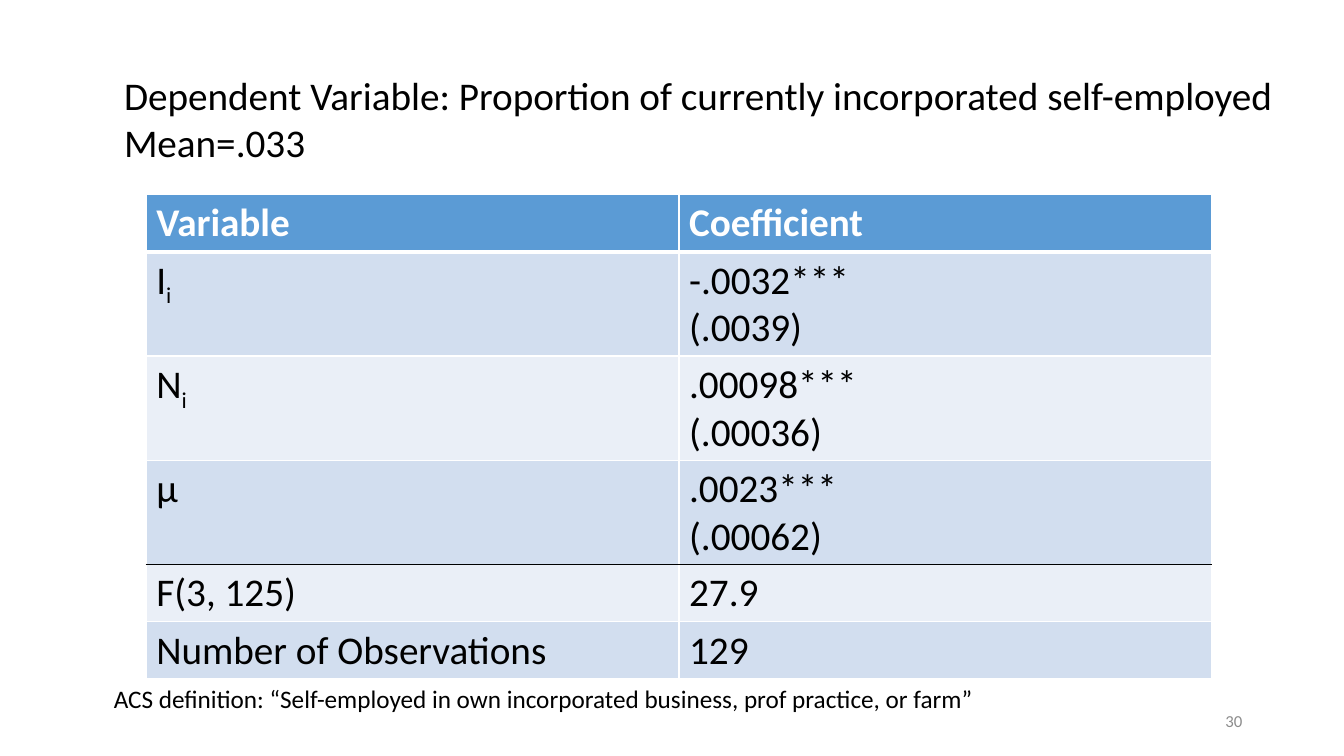
from lxml import etree
from pptx import Presentation
from pptx.dml.color import RGBColor
from pptx.enum.text import MSO_ANCHOR, MSO_AUTO_SIZE, PP_ALIGN
from pptx.oxml.ns import qn
from pptx.util import Inches, Pt

LEFT, RIGHT = PP_ALIGN.LEFT, PP_ALIGN.RIGHT
TOP, MIDDLE = MSO_ANCHOR.TOP, MSO_ANCHOR.MIDDLE
NO_FIT = MSO_AUTO_SIZE.NONE

BLACK = RGBColor(0x00, 0x00, 0x00)
WHITE = RGBColor(0xFF, 0xFF, 0xFF)
GRAY = RGBColor(0x8C, 0x8C, 0x8C)
HEADER_BLUE = RGBColor(0x5B, 0x9B, 0xD5)
BAND_DARK = RGBColor(0xD2, 0xDE, 0xEF)
BAND_LIGHT = RGBColor(0xEA, 0xEF, 0xF7)

FONT = "Calibri"
TITLE_ONLY = 5
LINE_HEIGHT = 0.47
CELL_PADDING = 0.095

HEADING = ["Dependent Variable: Proportion of currently incorporated self-employed",
           "Mean=.033"]
# Each row: variable, its subscript, lines of the coefficient cell
ROWS = [
    ("Variable", "", ["Coefficient"]),
    ("I", "i", ["-.0032***", "(.0039)"]),
    ("N", "i", [".00098***", "(.00036)"]),
    ("μ", "", [".0023***", "(.00062)"]),
    ("F(3, 125)", "", ["27.9"]),
    ("Number of Observations", "", ["129"]),
]
STATISTICS_ROW = 4  # a black rule runs above this row
FOOTNOTE = "ACS definition: “Self-employed in own incorporated business, prof practice, or farm”"


def write(frame, lines, size=28, color=BLACK, bold=False, align=LEFT, subscript=""):
    """Fill a text frame with one paragraph per line."""
    for index, line in enumerate(lines):
        para = frame.paragraphs[0] if index == 0 else frame.add_paragraph()
        para.alignment = align
        for text, baseline in ((line, None), (subscript, "-25000")):
            if not text:
                continue
            span = para.add_run()
            span.text = text
            span.font.name = FONT
            span.font.size = Pt(size)
            span.font.bold = bold
            span.font.color.rgb = color
            if baseline:
                span.font._element.set("baseline", baseline)


def set_border(cell, side, color, width):
    line = etree.SubElement(cell._tc.get_or_add_tcPr(), qn("a:ln" + side),
                            w=str(Pt(width)))
    fill = etree.SubElement(line, qn("a:solidFill"))
    etree.SubElement(fill, qn("a:srgbClr"), val=str(color))


def row_border(edge):
    """Colour and width of the horizontal rule above row number edge."""
    if edge == 1:
        return WHITE, 3
    return (BLACK if edge == STATISTICS_ROW else WHITE), 1


def add_heading(page, left, top, width, height):
    title = page.shapes.title
    title.left, title.top = Inches(left), Inches(top)
    title.width, title.height = Inches(width), Inches(height)
    frame = title.text_frame
    frame.word_wrap = True
    frame.auto_size = NO_FIT
    frame.vertical_anchor = TOP
    write(frame, HEADING)


def add_results(page, left, top, width):
    heights = [LINE_HEIGHT * len(lines) + CELL_PADDING for _, _, lines in ROWS]
    table = page.shapes.add_table(len(ROWS), 2, Inches(left), Inches(top),
                                  Inches(width), Inches(sum(heights))).table
    for column in table.columns:
        column.width = Inches(width / 2)
    for number, (name, subscript, lines) in enumerate(ROWS):
        table.rows[number].height = Inches(heights[number])
        is_header = number == 0
        band = BAND_DARK if number % 2 else BAND_LIGHT
        contents = (([name], subscript), (lines, ""))
        for cell, (texts, below) in zip(table.rows[number].cells, contents):
            set_border(cell, "L", WHITE, 1)
            set_border(cell, "R", WHITE, 1)
            set_border(cell, "T", *row_border(number))
            set_border(cell, "B", *row_border(number + 1))
            cell.fill.solid()
            cell.fill.fore_color.rgb = HEADER_BLUE if is_header else band
            write(cell.text_frame, texts, bold=is_header, subscript=below,
                  color=WHITE if is_header else BLACK)


def add_label(page, text, left, top, width, height, anchor=TOP, **style):
    box = page.shapes.add_textbox(Inches(left), Inches(top), Inches(width), Inches(height))
    box.text_frame.word_wrap = True
    box.text_frame.vertical_anchor = anchor
    write(box.text_frame, [text], **style)


def main():
    deck = Presentation()
    deck.slide_width, deck.slide_height = Inches(13.33), Inches(7.5)
    page = deck.slides.add_slide(deck.slide_layouts[TITLE_ONLY])

    # Page number, results table, heading and footnote
    add_label(page, "30", 9.42, 6.95, 3, 0.4, anchor=MIDDLE, size=12, color=GRAY, align=RIGHT)
    add_results(page, 1.45, 1.93, 10.57)
    add_heading(page, 1.13, 0.66, 11.74, 1.04)
    add_label(page, FOOTNOTE, 1.03, 6.73, 10.81, 0.4, size=18)

    deck.save("out.pptx")


if __name__ == "__main__":
    main()
